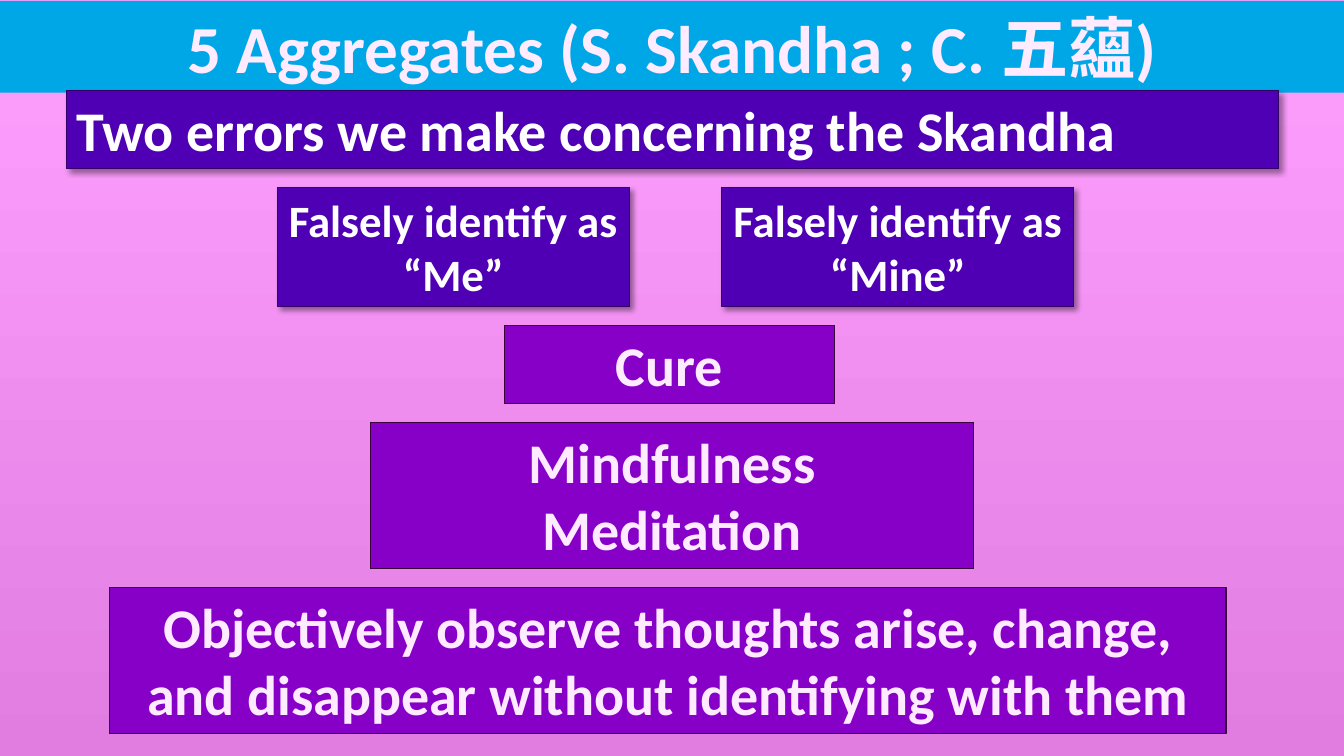
from lxml.etree import SubElement
from pptx import Presentation
from pptx.dml.color import RGBColor as RGB
from pptx.enum.shapes import MSO_SHAPE as Shape
from pptx.enum.text import MSO_ANCHOR as Anchor, MSO_AUTO_SIZE as Auto, PP_ALIGN as Align
from pptx.oxml.ns import qn
from pptx.util import Inches, Pt

PINK, ROSE = RGB(0xFF, 0xA0, 0xFF), RGB(0xE1, 0x7D, 0xE1)
SKY, BLUSH, WHITE = RGB(0x00, 0xA7, 0xE6), RGB(0xFF, 0xEB, 0xFF), RGB(0xFF, 0xFF, 0xFF)
INDIGO, NAVY = RGB(0x50, 0x00, 0xB4), RGB(0x32, 0x00, 0x64)
PURPLE, PLUM = RGB(0x87, 0x00, 0xC8), RGB(0x3A, 0x00, 0x3A)

# Styles: fill, outline, text colour, shadow
STYLES = {
    "title": (SKY, None, BLUSH, False),
    "error": (INDIGO, NAVY, WHITE, True),
    "cure": (PURPLE, PLUM, BLUSH, False),
}

# Rows: style, text size, height, boxes as (left, width, alignment, lines)
ROWS = [
    ("title", 48, 0.91, [(0, 13.33, Align.CENTER, ["5 Aggregates (S. Skandha ; C. 五蘊)"])]),
    ("error", 40, 0.77, [(0.66, 12.02, Align.LEFT,
                          ["Two errors we make concerning the Skandha"])]),
    ("error", 32, 1.18, [(2.75, 3.49, Align.CENTER, ["Falsely identify as “Me”"]),
                         (7.16, 3.49, Align.CENTER, ["Falsely identify as “Mine”"])]),
    ("cure", 40, 0.77, [(5, 3.28, Align.CENTER, ["Cure"])]),
    ("cure", 40, 1.45, [(3.67, 5.99, Align.CENTER, ["Mindfulness", "Meditation"])]),
    ("cure", 40, 1.45, [(1.09, 11.07, Align.CENTER, [
        "Objectively observe thoughts arise, change, "
        "and disappear without identifying with them"])]),
]
TOP, GAP = 0.01, 0.19
LAP = 0.02  # the heading slightly overlaps the title band


def cast(box):
    """Give a box a soft shadow towards the lower right."""
    effects = box._element.spPr.find(qn("a:effectLst"))
    shade = SubElement(effects, qn("a:outerShdw"), blurRad=str(Pt(4)), dist=str(Pt(3)),
                       dir=str(45 * 60000), algn="tl", rotWithShape="0")
    tint = SubElement(shade, qn("a:srgbClr"), val="000000")
    SubElement(tint, qn("a:alpha"), val="40000")


def write(frame, lines, size, color, align):
    frame.word_wrap = True
    frame.auto_size = Auto.SHAPE_TO_FIT_TEXT
    frame.vertical_anchor = Anchor.TOP
    for i, line in enumerate(lines):
        para = frame.add_paragraph() if i else frame.paragraphs[0]
        para.alignment = align
        run = para.add_run()
        run.text = line
        font = run.font
        font.name, font.size, font.bold = "Calibri", Pt(size), True
        font.color.rgb = color


def draw(slide, style, size, area, align, lines):
    fill, edge, ink, shadow = STYLES[style]
    box = slide.shapes.add_shape(Shape.RECTANGLE, *map(Inches, area))
    box.fill.solid()
    box.fill.fore_color.rgb = fill
    if edge is None:
        box.line.fill.background()
    else:
        box.line.color.rgb = edge
        box.line.width = Pt(0.75)
    box.shadow.inherit = False
    if shadow:
        cast(box)
    write(box.text_frame, lines, size, ink, align)


def main():
    deck = Presentation()
    deck.slide_width, deck.slide_height = Inches(13.33), Inches(7.5)
    slide = deck.slides.add_slide(deck.slide_layouts[6])

    # Background, fading downwards
    back = slide.background.fill
    back.gradient()
    back.gradient_angle = 270
    for stop, color, place in zip(back.gradient_stops, (PINK, ROSE), (0, 1)):
        stop.color.rgb = color
        stop.position = place

    # Rows stacked from top to bottom
    top = TOP
    for style, size, height, boxes in ROWS:
        for left, width, align, lines in boxes:
            draw(slide, style, size, (left, top, width, height), align, lines)
        top += height + (-LAP if style == "title" else GAP)

    deck.save("out.pptx")


if __name__ == "__main__":
    main()
